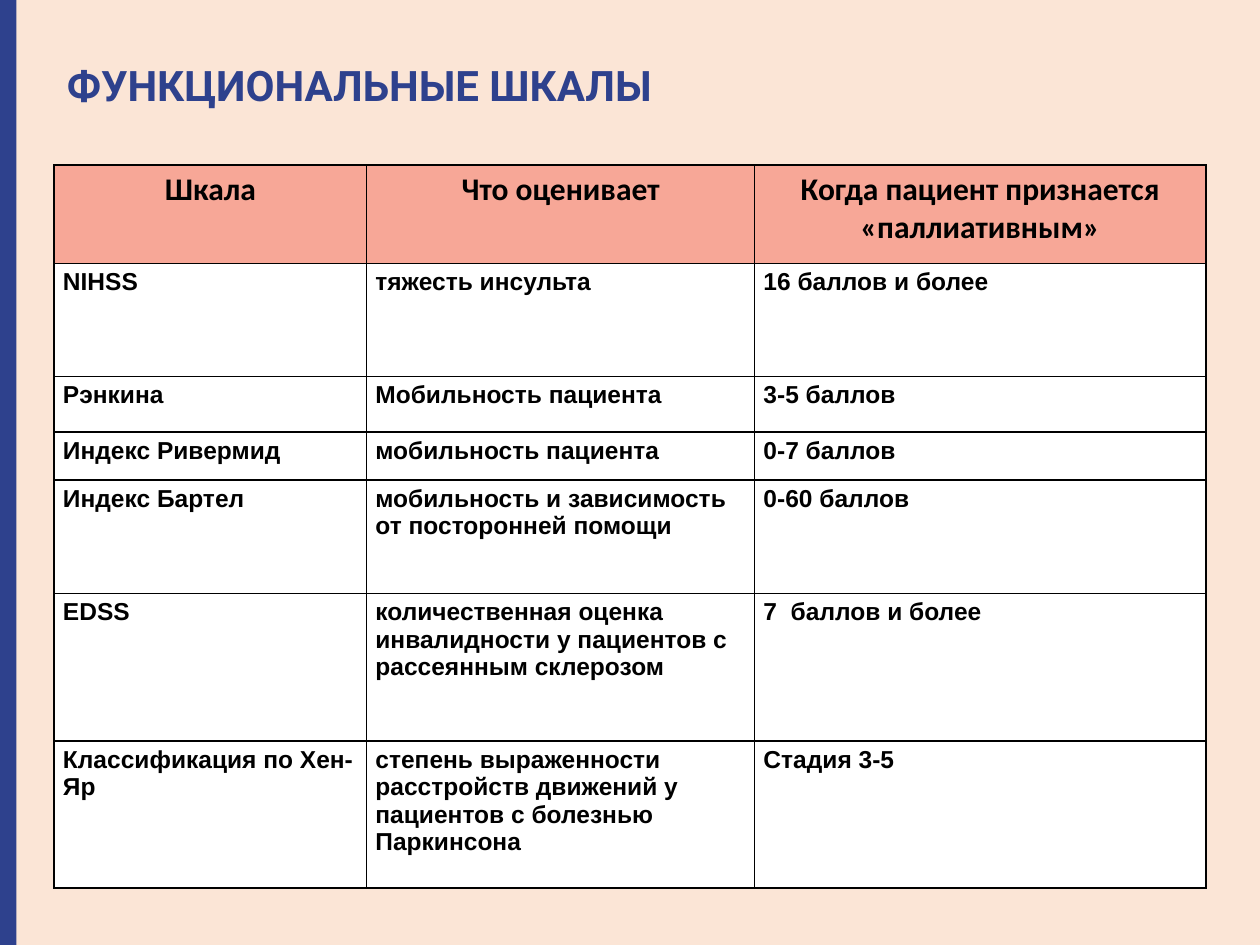
from dataclasses import dataclass

import pptx
import pptx.dml.color
import pptx.enum.shapes
import pptx.enum.text
import pptx.oxml
import pptx.oxml.ns
import pptx.util
from pptx.util import Inches

BLUE = "2E418D"
PEACH = "FBE5D6"
SALMON = "F7A797"
WHITE = "FFFFFF"
BLACK = "000000"

COLUMN_WIDTHS = (2.48, 3.08, 3.58)


@dataclass(frozen=True)
class TextStyle:
    font: str
    size: int
    color: str
    align: pptx.enum.text.PP_ALIGN


@dataclass(frozen=True)
class ScaleRow:
    height: float
    texts: tuple[str, str, str]


LEFT = pptx.enum.text.PP_ALIGN.LEFT
CENTER = pptx.enum.text.PP_ALIGN.CENTER
TITLE_STYLE = TextStyle("Roboto", 24, BLUE, LEFT)
HEADER_STYLE = TextStyle("Calibri", 18, BLACK, CENTER)
BODY_STYLE = TextStyle("Arial", 14, BLACK, LEFT)

ROWS = (
    ScaleRow(0.78, ("Шкала", "Что оценивает", "Когда пациент признается «паллиативным»")),
    ScaleRow(0.9, ("NIHSS", "тяжесть инсульта", "16 баллов и более")),
    ScaleRow(0.44, ("Рэнкина", "Мобильность пациента", "3-5 баллов")),
    ScaleRow(0.38, ("Индекс Ривермид", "мобильность пациента", "0-7 баллов")),
    ScaleRow(0.9, ("Индекс Бартел", "мобильность и зависимость от посторонней помощи", "0-60 баллов")),
    ScaleRow(1.17, ("EDSS", "количественная оценка инвалидности у пациентов с рассеянным склерозом", "7  баллов и более ")),
    ScaleRow(1.17, ("Классификация по Хен-Яр", "степень выраженности расстройств движений у пациентов с болезнью Паркинсона", "Стадия 3-5")),
)


def rgb(color: str) -> pptx.dml.color.RGBColor:
    return pptx.dml.color.RGBColor.from_string(color)


def paint(fill, color: str) -> None:
    fill.solid()
    fill.fore_color.rgb = rgb(color)


def write(frame, text: str, style: TextStyle) -> None:
    para = frame.paragraphs[0]
    para.alignment = style.align
    span = para.add_run()
    span.text = text
    span.font.name = style.font
    span.font.size = pptx.util.Pt(style.size)
    span.font.bold = True
    span.font.color.rgb = rgb(style.color)


def outline(cell, color: str, points: float) -> None:
    properties = cell._tc.get_or_add_tcPr()
    for index, side in enumerate(("lnL", "lnR", "lnT", "lnB")):
        line = pptx.oxml.parse_xml(
            f'<a:{side} {pptx.oxml.ns.nsdecls("a")} w="{pptx.util.Pt(points)}">'
            f'<a:solidFill><a:srgbClr val="{color}"/></a:solidFill></a:{side}>'
        )
        properties.insert(index, line)


def draw_bar(page) -> None:
    bar = page.shapes.add_shape(
        pptx.enum.shapes.MSO_SHAPE.RECTANGLE, 0, 0, Inches(0.13), Inches(7.5)
    )
    bar.shadow.inherit = False
    paint(bar.fill, BLUE)
    bar.line.fill.background()


def draw_title(page, text: str) -> None:
    title = page.shapes.title
    title.left, title.top = Inches(0.43), Inches(0.44)
    title.width, title.height = Inches(7.87), Inches(0.52)
    frame = title.text_frame
    frame.auto_size = pptx.enum.text.MSO_AUTO_SIZE.NONE
    frame.vertical_anchor = pptx.enum.text.MSO_ANCHOR.MIDDLE
    write(frame, text, TITLE_STYLE)
    frame.paragraphs[0].line_spacing = 0.9


def draw_table(page, rows: tuple[ScaleRow, ...]) -> None:
    table = page.shapes.add_table(
        len(rows), len(COLUMN_WIDTHS), Inches(0.43), Inches(1.31),
        Inches(sum(COLUMN_WIDTHS)), Inches(sum(row.height for row in rows)),
    ).table
    for column, width in zip(table.columns, COLUMN_WIDTHS):
        column.width = Inches(width)
    for index, row in enumerate(rows):
        table.rows[index].height = Inches(row.height)
        style, color = (BODY_STYLE, WHITE) if index else (HEADER_STYLE, SALMON)
        for cell, text in zip(table.rows[index].cells, row.texts):
            cell.margin_left = cell.margin_right = Inches(0.07)
            cell.margin_top = cell.margin_bottom = Inches(0.04)
            paint(cell.fill, color)
            outline(cell, BLACK, 1)
            write(cell.text_frame, text, style)


def main() -> None:
    deck = pptx.Presentation()
    deck.slide_width, deck.slide_height = Inches(10), Inches(7.5)
    page = deck.slides.add_slide(deck.slide_layouts.get_by_name("Title Only"))
    paint(page.background.fill, PEACH)
    draw_bar(page)
    draw_title(page, "ФУНКЦИОНАЛЬНЫЕ ШКАЛЫ")
    draw_table(page, ROWS)
    deck.save("out.pptx")


if __name__ == "__main__":
    main()
